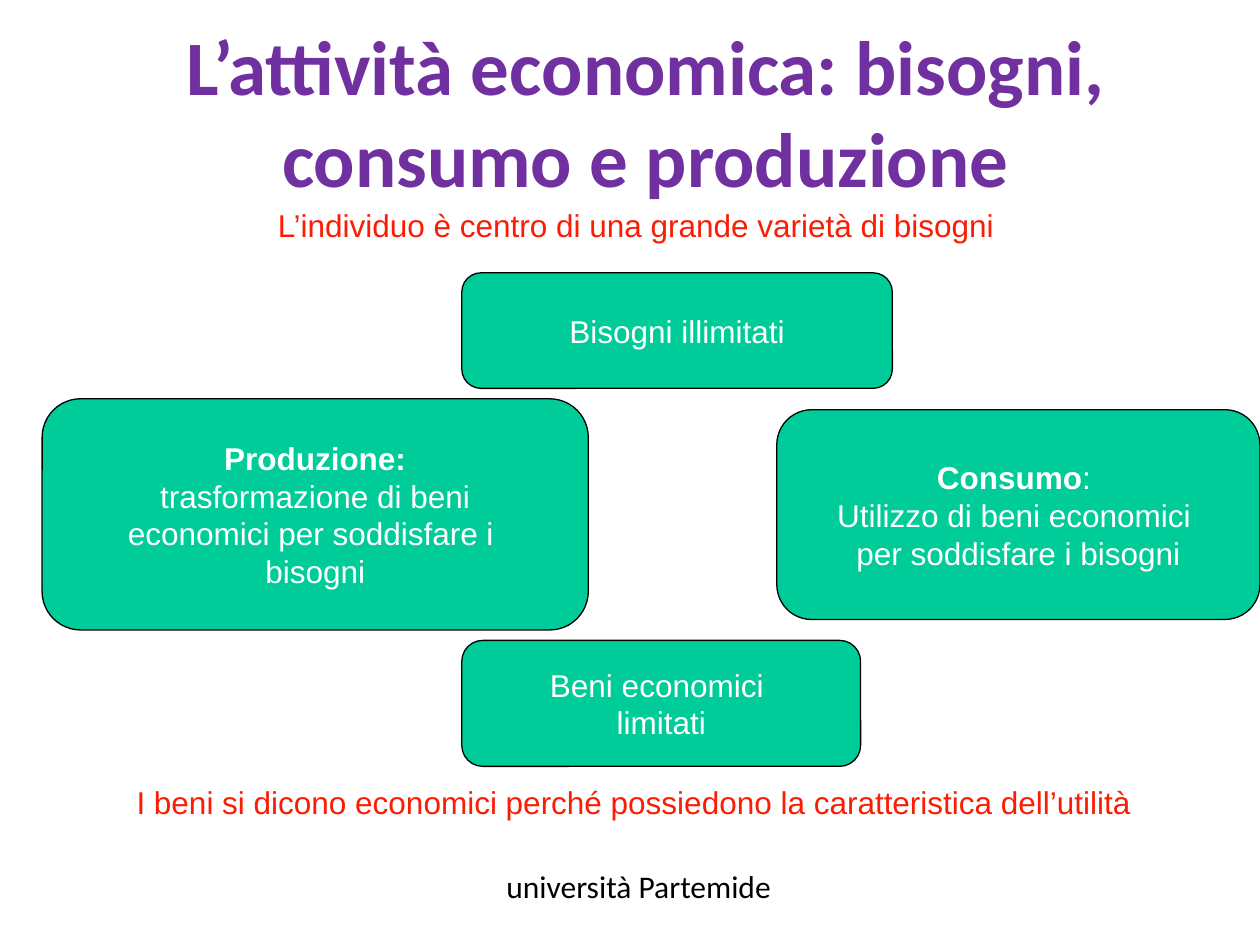
from pptx import Presentation
from pptx.dml.color import RGBColor
from pptx.enum.shapes import MSO_SHAPE
from pptx.enum.text import MSO_ANCHOR, PP_ALIGN
from pptx.util import Cm, Pt

GREEN, WHITE, BLACK = "00CC99", "FFFFFF", "000000"
PURPLE, RED = "7030A0", "FC1C04"

BOXES = [
    ((9.31, 5.5, 8.68, 2.33), [[("Bisogni illimitati", False)]]),
    ((0.85, 8.04, 11.01, 4.66), [
        [("Produzione:", True)],
        [("trasformazione di beni", False)],
        [("economici per soddisfare i ", False)],
        [("bisogni", False)],
    ]),
    ((9.31, 12.91, 8.04, 2.54), [
        [("Beni economici ", False)],
        [("limitati", False)],
    ]),
    ((15.66, 8.26, 9.74, 4.23), [
        [("Consumo", True), (": ", False)],
        [("Utilizzo di beni economici ", False)],
        [("per soddisfare i bisogni", False)],
    ]),
]


def color(value):
    """Return the colour for a hex string."""
    return RGBColor.from_string(value)


def write_paragraphs(text_frame, paragraphs, font_color, name="Arial", size=18,
                     alignment=PP_ALIGN.CENTER):
    """Fill a text frame with paragraphs of (text, bold) runs."""
    for index, runs in enumerate(paragraphs):
        paragraph = text_frame.add_paragraph() if index else text_frame.paragraphs[0]
        paragraph.alignment = alignment
        for text, bold in runs:
            run = paragraph.add_run()
            run.text = text
            values = {"name": name, "size": Pt(size), "bold": bold}
            for attribute, value in values.items():
                setattr(run.font, attribute, value)
            run.font.color.rgb = color(font_color)


def add_text(slide, position, text, font_color, bold=False,
             anchor=MSO_ANCHOR.TOP, **text_format):
    """Add a wrapping text box with one paragraph."""
    text_frame = slide.shapes.add_textbox(*map(Cm, position)).text_frame
    text_frame.word_wrap = True
    text_frame.vertical_anchor = anchor
    write_paragraphs(text_frame, [[(text, bold)]], font_color, **text_format)


def add_box(slide, position, paragraphs):
    """Add a green rounded box with centred white text."""
    shape = slide.shapes.add_shape(MSO_SHAPE.ROUNDED_RECTANGLE, *map(Cm, position))
    shape.shadow.inherit = False
    shape.fill.solid()
    shape.fill.fore_color.rgb = color(GREEN)
    shape.line.color.rgb = color(BLACK)
    shape.line.width = Pt(0.75)
    shape.text_frame.word_wrap = False
    shape.text_frame.vertical_anchor = MSO_ANCHOR.MIDDLE
    write_paragraphs(shape.text_frame, paragraphs, WHITE)


def main():
    """Build the slide and save it."""
    presentation = Presentation()
    presentation.slide_width, presentation.slide_height = Cm(25.4), Cm(19.05)
    slide = presentation.slides.add_slide(presentation.slide_layouts[6])
    add_text(slide, (9.96, 17.35, 8.05, 1.27), "università Partemide", BLACK,
             name="Calibri", alignment=PP_ALIGN.LEFT)
    add_text(slide, (1.27, 0.43, 23.5, 3.61),
             "L’attività economica: bisogni, consumo e produzione", PURPLE,
             bold=True, anchor=MSO_ANCHOR.MIDDLE, name="Calibri", size=44)
    for position, paragraphs in BOXES:
        add_box(slide, position, paragraphs)
    add_text(slide, (1.9, 4.02, 21.84, 2.29),
             "L’individuo è centro di una grande varietà di bisogni", RED)
    add_text(slide, (0.85, 15.67, 24.03, 3.3),
             "I beni si dicono economici perché possiedono la caratteristica dell’utilità ",
             RED)
    presentation.save("out.pptx")


if __name__ == "__main__":
    main()
